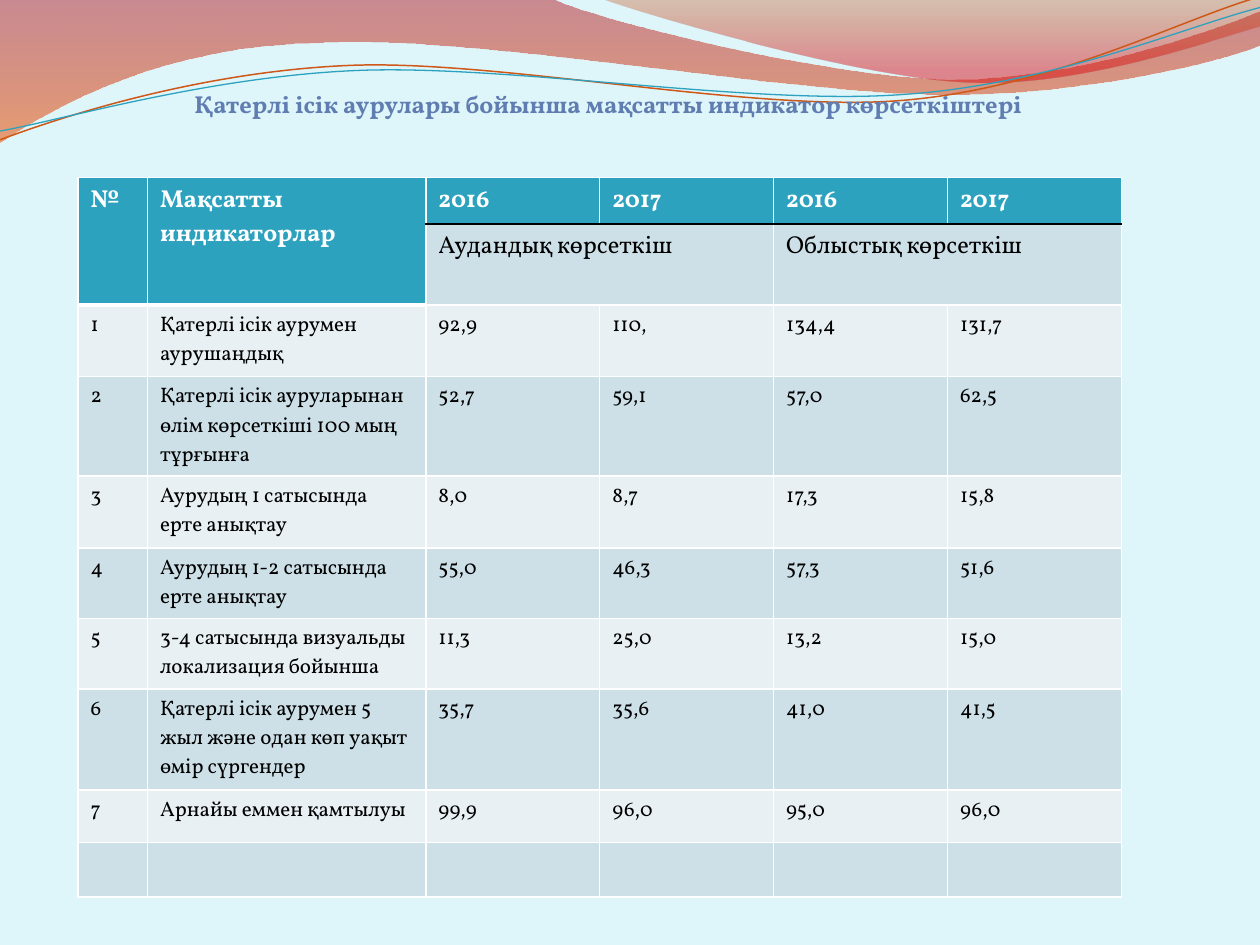
from lxml.etree import SubElement
from pptx import Presentation
from pptx.dml.color import RGBColor
from pptx.enum.text import MSO_ANCHOR, PP_ALIGN
from pptx.oxml.ns import qn
from pptx.util import Pt

PX = 9144  # EMU per px, 100 px to the inch
FONT = "Vollkorn"
COLORS = {
    "background": "DEF5FA", "title": "607DB2", "header": "2DA2BF",
    "band_dark": "CDE0E8", "band_light": "E8F0F4",
    "white": "FFFFFF", "black": "000000",
    "crimson": "AF0911", "orange": "EE5300", "rust": "C24400", "red": "DC000B",
    "line_orange": "CF5818", "line_teal": "2DA2BF",
}

TITLE = "Қатерлі ісік аурулары бойынша мақсатты индикатор көрсеткіштері"
COLUMNS = [55, 221, 138, 138, 138, 138]
ROW_HEIGHTS = [37, 64, 57, 79, 57, 56, 56, 80, 42, 43]
HEADER_ROWS = 2
ROWS = [
    ["№", "Мақсатты индикаторлар", "2016", "2017", "2016", "2017"],
    ["", "", "Аудандық көрсеткіш", "", "Облыстық көрсеткіш", ""],
    ["1", "Қатерлі ісік аурумен аурушаңдық", "92,9", "110,", "134,4", "131,7"],
    ["2", "Қатерлі ісік ауруларынан өлім көрсеткіші 100 мың тұрғынға",
     "52,7", "59,1", "57,0", "62,5"],
    ["3", "Аурудың 1 сатысында ерте анықтау", "8,0", "8,7", "17,3", "15,8"],
    ["4", "Аурудың 1-2 сатысында ерте анықтау", "55,0", "46,3", "57,3", "51,6"],
    ["5", "3-4 сатысында визуальды локализация бойынша",
     "11,3", "25,0", "13,2", "15,0"],
    ["6", "Қатерлі ісік аурумен 5 жыл және одан көп уақыт өмір сүргендер",
     "35,7", "35,6", "41,0", "41,5"],
    ["7", "Арнайы еммен қамтылуы", "99,9", "96,0", "95,0", "96,0"],
    [""] * 6,
]

# Each outline is a start point followed by lines (2 numbers) and curves (6 numbers).
BANDS = [
    ([(0, 0), (440, 0), (476, 17, 664, 63, 758, 63), (853, 63, 958, 26, 1000, 9),
      (1000, 36), (983, 44, 870, 76, 746, 75), (622, 75, 382, 28, 257, 34),
      (129, 36, 46, 83, 0, 113)],
     [("crimson", 0, 45), ("orange", 1, 55)]),
    ([(479, 0), (509, 11, 682, 62, 769, 65), (856, 69, 961, 32, 1000, 21), (1000, 0)],
     [("rust", 0, 30), ("red", 0.8, 45)]),
]
WAVES = [
    ([(0, 111), (48, 93, 158, 57, 277, 52), (395, 47, 593, 89, 713, 80),
      (833, 71, 938, 15, 998, -2)], "line_orange", 0.85),
    ([(0, 104), (47, 96, 164, 61, 283, 56), (403, 51, 597, 84, 717, 75),
      (836, 67, 941, 21, 1000, 6)], "line_teal", 0.75),
]


def rgb(name):
    return RGBColor.from_string(COLORS[name])


def format_text(tf, size, color, bold=False):
    for p in tf.paragraphs:
        for r in p.runs:
            r.font.name = FONT
            r.font.size = Pt(size)
            r.font.bold = bold
            r.font.color.rgb = rgb(color)


def add_outline(s, left, top, outline, close):
    """Draw every vertex as a line end, then join each curve's three into one curve."""
    points = [(left + x, top + y) for segment in outline
              for x, y in zip(segment[0::2], segment[1::2])]
    builder = s.shapes.build_freeform(*points[0], scale=PX)
    builder.add_line_segments(points[1:], close=close)
    sp = builder.convert_to_shape()
    sp.shadow.inherit = False
    lines = iter(list(sp._element.iter(qn("a:lnTo"))))
    for segment in outline[1:]:
        first = next(lines)
        if len(segment) == 6:
            first.tag = qn("a:cubicBezTo")
            for _ in range(2):
                line = next(lines)
                first.append(line[0])
                line.getparent().remove(line)
    return sp


def add_wave_header(s, left, top):
    for outline, stops in BANDS:
        sp = add_outline(s, left, top, outline, True)
        sp.line.fill.background()
        sp.fill.gradient()
        sp.fill.gradient_angle = 270
        for stop, (color, position, _) in zip(sp.fill.gradient_stops, stops):
            stop.color.rgb = rgb(color)
            stop.position = position
        gradient = sp._element.spPr.find(qn("a:gradFill"))
        for clr, (_, _, opacity) in zip(gradient.iter(qn("a:srgbClr")), stops):
            SubElement(clr, qn("a:alpha"), val=str(opacity * 1000))
    for outline, color, width in WAVES:
        sp = add_outline(s, left, top, outline, False)
        sp.fill.background()
        sp.line.color.rgb = rgb(color)
        sp.line.width = Pt(width)


def add_title(s, left, top, width, height):
    box = s.shapes.add_textbox(left * PX, top * PX, width * PX, height * PX)
    tf = box.text_frame
    tf.word_wrap = True
    tf.vertical_anchor = MSO_ANCHOR.BOTTOM
    tf.margin_left = tf.margin_right = tf.margin_top = tf.margin_bottom = 0
    tf.text = TITLE
    tf.paragraphs[0].alignment = PP_ALIGN.CENTER
    format_text(tf, 14, "title", True)


def set_borders(cell, top="white", bottom="white", bottom_width=1):
    tcPr = cell._tc.get_or_add_tcPr()
    sides = [("L", "white", 1), ("R", "white", 1), ("T", top, 1),
             ("B", bottom, bottom_width)]
    for i, (side, color, width) in enumerate(sides):
        ln = SubElement(tcPr, qn("a:ln" + side), w=str(Pt(width)))
        SubElement(SubElement(ln, qn("a:solidFill")), qn("a:srgbClr"), val=COLORS[color])
        tcPr.insert(i, ln)


def add_indicator_table(s, left, top):
    table = s.shapes.add_table(
        len(ROWS), len(COLUMNS), left * PX, top * PX,
        sum(COLUMNS) * PX, sum(ROW_HEIGHTS) * PX).table
    table.first_row = table.horz_banding = False
    for column, width in zip(table.columns, COLUMNS):
        column.width = width * PX
    for row, height in zip(table.rows, ROW_HEIGHTS):
        row.height = height * PX

    for i, texts in enumerate(ROWS):
        for j, text in enumerate(texts):
            cell = table.cell(i, j)
            in_header = i < HEADER_ROWS
            is_heading = i == 0 or (in_header and j < 2)
            band = "band_light" if i % 2 == 0 else "band_dark"
            cell.fill.solid()
            cell.fill.fore_color.rgb = rgb("header" if is_heading else band)
            if in_header and j < 2:
                set_borders(cell, bottom_width=3)
            else:
                set_borders(cell, top="black" if i == 1 else "white",
                            bottom="black" if i == 0 else "white")
            if text:
                cell.text_frame.text = text
                format_text(cell.text_frame, 14 if in_header else 12,
                            "white" if is_heading else "black", is_heading)

    for first, last in [((0, 0), (1, 0)), ((0, 1), (1, 1)),
                        ((1, 2), (1, 3)), ((1, 4), (1, 5))]:
        table.cell(*first).merge(table.cell(*last))


def main():
    prs = Presentation()
    prs.slide_width, prs.slide_height = 1000 * PX, 750 * PX
    s = prs.slides.add_slide(prs.slide_layouts[6])
    s.background.fill.solid()
    s.background.fill.fore_color.rgb = rgb("background")
    add_wave_header(s, 0, 0)
    add_title(s, 58, 63, 850, 31)
    add_indicator_table(s, 62, 141)
    prs.save("out.pptx")


if __name__ == "__main__":
    main()
